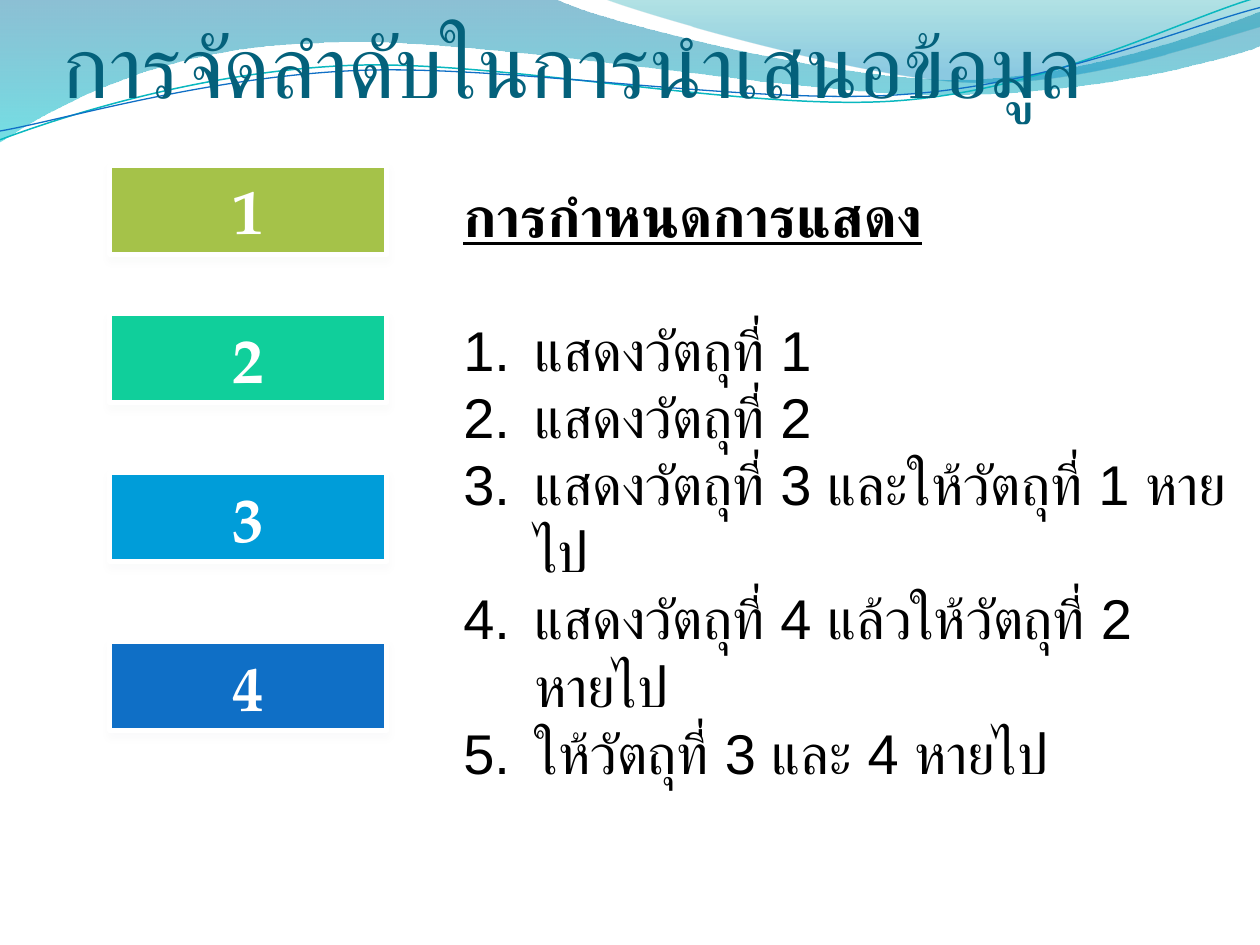
import pptx
import pptx.dml.color
import pptx.enum.lang
import pptx.enum.shapes
import pptx.enum.text
import pptx.oxml.ns
import pptx.util
from lxml import etree
from pptx.util import Cm

qn = pptx.oxml.ns.qn
ALIGN = pptx.enum.text.PP_ALIGN
ANCHOR = pptx.enum.text.MSO_ANCHOR


def rgb(value):
    return pptx.dml.color.RGBColor.from_string(value)


def format_runs(paragraph, size, font, colour, bold=False, underline=False):
    for run in paragraph.runs:
        run.font.size = pptx.util.Pt(size)
        run.font.name = font
        run.font.bold = bold
        run.font.underline = underline
        run.font.color.rgb = rgb(colour)
        run.font.language_id = pptx.enum.lang.MSO_LANGUAGE_ID.THAI
        # Thai letters take the complex-script font
        etree.SubElement(run.font._element, qn("a:cs"), typeface=font)


presentation = pptx.Presentation()
presentation.slide_width = Cm(25.4)
presentation.slide_height = Cm(19.05)
slide = presentation.slides.add_slide(presentation.slide_layouts[6])
shapes = slide.shapes

# Waves: a pair is a straight step, six numbers are a Bézier curve, in hundredths of 2.54 cm
waves = [
    {"start": (0, 0), "gradient": [(0, "0074A1", 45), (1, "00C6CF", 55)],
     "steps": [(440, -1), (476, 17, 664, 63, 758, 63), (853, 63, 958, 26, 1000, 9),
               (1001, 36), (983, 44, 870, 76, 746, 75), (622, 75, 382, 28, 257, 34),
               (129, 36, 46, 83, -1, 113)]},
    {"start": (479, -1), "gradient": [(0, "00A1A9", 30), (0.8, "008BBF", 45)],
     "steps": [(509, 11, 682, 62, 769, 65), (856, 69, 961, 32, 1000, 21), (1000, 0)]},
    {"start": (0, 111), "line": ("0AB8BF", 0.85),
     "steps": [(48, 93, 158, 57, 277, 52), (395, 47, 593, 89, 713, 80),
               (833, 71, 938, 15, 998, -2)]},
    {"start": (0, 104), "line": ("0F6FC6", 0.75),
     "steps": [(47, 96, 164, 61, 283, 56), (403, 51, 597, 84, 717, 75),
               (836, 67, 941, 21, 1000, 6)]},
]
for wave in waves:
    points = [step[i:i + 2] for step in wave["steps"] for i in range(0, len(step), 2)]
    builder = shapes.build_freeform(*wave["start"], scale=Cm(2.54) / 100)
    builder.add_line_segments(points, close="gradient" in wave)
    shape = builder.convert_to_shape()
    shape.shadow.inherit = False

    # Join the three straight pieces of each curve into one Bézier segment
    segments = iter(list(shape._element.iter(qn("a:lnTo"))))
    for step in wave["steps"]:
        segment = next(segments)
        if len(step) == 6:
            segment.tag = qn("a:cubicBezTo")
            for _ in range(2):
                extra = next(segments)
                segment.append(extra[0])
                extra.getparent().remove(extra)

    if "gradient" in wave:
        shape.line.fill.background()
        shape.fill.gradient()
        shape.fill.gradient_angle = 270
        for stop, (position, colour, opacity) in zip(shape.fill.gradient_stops,
                                                     wave["gradient"]):
            stop.position = position
            stop.color.rgb = rgb(colour)
            colour_element = stop._gs.find(qn("a:srgbClr"))
            etree.SubElement(colour_element, qn("a:alpha"), val=str(opacity * 1000))
    else:
        colour, width = wave["line"]
        shape.fill.background()
        shape.line.color.rgb = rgb(colour)
        shape.line.width = pptx.util.Pt(width)

# Title
title = shapes.add_textbox(Cm(1.27), Cm(-0.84), Cm(22.86), Cm(3.18))
frame = title.text_frame
frame.word_wrap = True
frame.vertical_anchor = ANCHOR.BOTTOM
frame.margin_left = frame.margin_right = frame.margin_bottom = 0
frame.text = "การจัดลำดับในการนำเสนอข้อมูล"
format_runs(frame.paragraphs[0], 50, "Arial", "04617B")

# Numbered objects: top in cm, fill, shadow colour
boxes = [(3.33, "A5C249", "3A4519"), (6.32, "10CF9B", "044A37"),
         (9.52, "009DD9", "00374C"), (12.93, "0F6FC6", "042747")]
for number, (top, fill, shadow) in enumerate(boxes, start=1):
    box = shapes.add_shape(pptx.enum.shapes.MSO_SHAPE.RECTANGLE,
                           Cm(2.21), Cm(top), Cm(5.59), Cm(1.8))
    box.fill.solid()
    box.fill.fore_color.rgb = rgb(fill)
    box.line.color.rgb = rgb("FFFFFF")
    box.line.width = pptx.util.Pt(3)
    box.shadow.inherit = False
    effects = box._element.spPr.find(qn("a:effectLst"))
    outer = etree.SubElement(effects, qn("a:outerShdw"), blurRad=str(pptx.util.Pt(4.5)),
                             dist=str(pptx.util.Pt(3)), dir="5400000", rotWithShape="0")
    shadow_colour = etree.SubElement(outer, qn("a:srgbClr"), val=shadow)
    etree.SubElement(shadow_colour, qn("a:alpha"), val="2000")
    box.text_frame.vertical_anchor = ANCHOR.MIDDLE
    box.text_frame.text = str(number)
    box.text_frame.paragraphs[0].alignment = ALIGN.CENTER
    format_runs(box.text_frame.paragraphs[0], 36, "TeX Gyre Pagella", "FFFFFF", bold=True)

# Heading and numbered steps
steps = ["การกำหนดการแสดง", "แสดงวัตถุที่ 1", "แสดงวัตถุที่ 2",
         "แสดงวัตถุที่ 3 และให้วัตถุที่ 1 หายไป",
         "แสดงวัตถุที่ 4 แล้วให้วัตถุที่ 2 หายไป",
         "ให้วัตถุที่ 3 และ 4 หายไป"]
sequence = shapes.add_textbox(Cm(9.09), Cm(3.53), Cm(15.88), Cm(9.83))
frame = sequence.text_frame
frame.word_wrap = True
frame.text = "\n".join(steps)
for index, paragraph in enumerate(frame.paragraphs):
    is_heading = index == 0
    format_runs(paragraph, 32, "Arial", "000000", bold=is_heading, underline=is_heading)
    if index == 1:
        paragraph.space_before = pptx.util.Pt(38)
    properties = paragraph._p.get_or_add_pPr()
    properties.set("marL", str(Cm(1.43)))
    properties.set("indent", str(Cm(-1.43)))
    if not is_heading:
        etree.SubElement(properties, qn("a:buFont"), typeface="Arial")
        etree.SubElement(properties, qn("a:buAutoNum"), type="arabicPeriod")

presentation.save("out.pptx")
